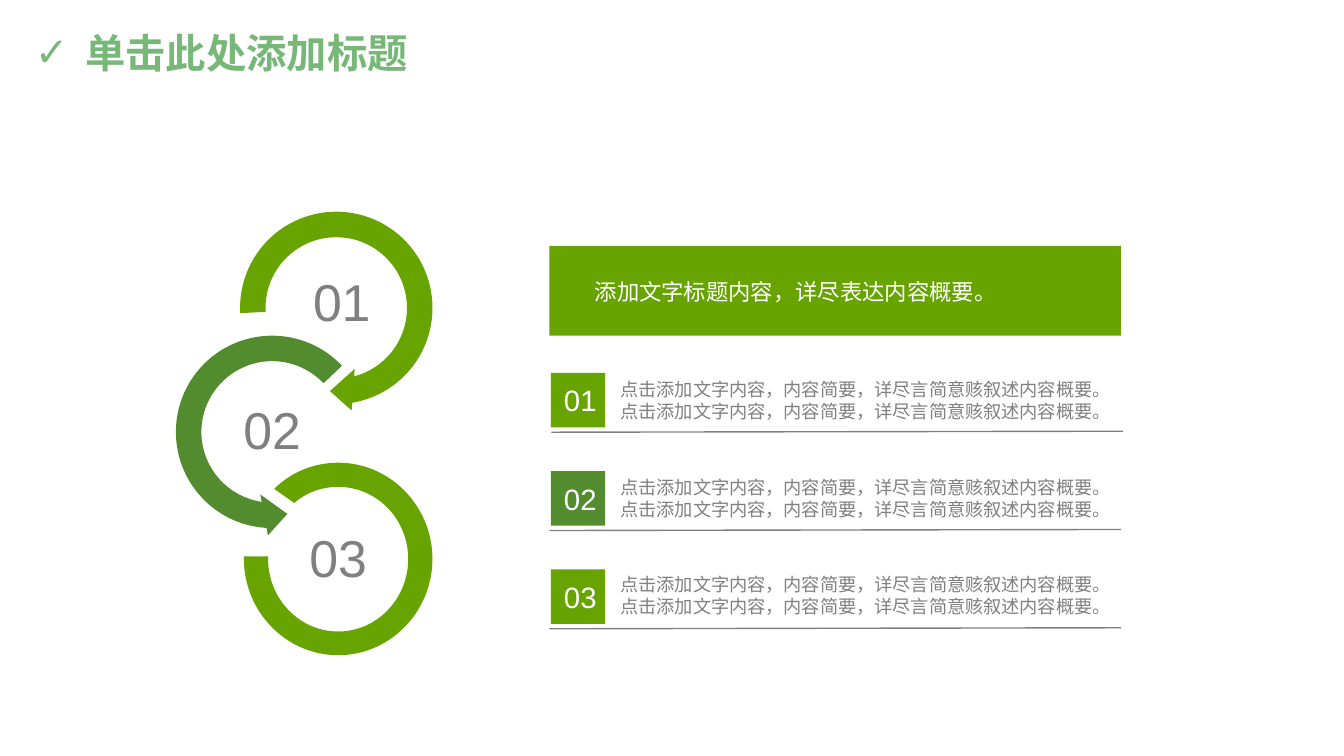
from dataclasses import dataclass
from typing import NamedTuple

from lxml.etree import SubElement
from pptx import Presentation
from pptx.dml.color import RGBColor as Color
from pptx.enum.shapes import MSO_CONNECTOR as Wire, MSO_SHAPE as Kind
from pptx.enum.text import MSO_ANCHOR as Anchor, MSO_AUTO_SIZE as Fit, PP_ALIGN as Align
from pptx.oxml.ns import qn
from pptx.util import Inches, Pt

CELL = Inches(0.1)  # one grid column or row
COLS, ROWS = 133.33, 75


@dataclass(frozen=True)
class Theme:
    lime: str = "67A400"
    leaf: str = "538C2E"
    mint: str = "77B878"
    gray: str = "808080"
    white: str = "FFFFFF"
    latin: str = "Arial"
    han: str = "Noto Sans CJK SC"
    head: str = "Montserrat"
    title: float = 28.8
    big: float = 37
    mark: float = 21
    lead: float = 16
    body: float = 13
    rule: float = 1


class Box(NamedTuple):
    left: float
    top: float
    width: float
    height: float


class Arrow(NamedTuple):
    box: Box
    turn: float
    start: float
    color: str
    flip: bool


class Step(NamedTuple):
    mark: str
    color: str
    label: Box  # place of the large number in its ring


T = Theme()
NOTE = "点击添加文字内容，内容简要，详尽言简意赅叙述内容概要。"
ARROWS = [
    Arrow(Box(23, 20.2, 20.7, 20.7), 97, 47.907, T.lime, False),
    Arrow(Box(16.65, 32.5, 20.7, 20.7), 256.8, 72.143, T.leaf, True),
]
STEPS = [
    Step("01", T.lime, Box(29.75, 26.1, 8.5, 7.6)),
    Step("02", T.leaf, Box(22.85, 38.8, 8.5, 7.6)),
    Step("03", T.lime, Box(29.4, 51.5, 8.5, 7.6)),
]
# Open ring: each entry ends a side; a curve lists two handles before its end
RING = [
    [(33.55, 45.9)],
    [(38.7, 45.9), (42.9, 50.2), (42.9, 55.45)],
    [(42.9, 60.7), (38.7, 65), (33.55, 65)],
    [(28.4, 65), (24.2, 60.7), (24.2, 55.45)],
    [(24.2, 55.2)],
    [(26.6, 55.2)],
    [(26.6, 55.45)],
    [(26.6, 59.4), (29.7, 62.65), (33.55, 62.65)],
    [(37.4, 62.65), (40.5, 59.4), (40.5, 55.45)],
    [(40.5, 51.5), (37.4, 48.3), (33.55, 48.3)],
    [(31.9, 48.3), (30.3, 48.9), (29.2, 49.9)],
    [(27.2, 48.5)],
    [(28.8, 46.9), (31.1, 45.9), (33.55, 45.9)],
]
LEFT, WIDTH = 54.5, 56.7  # banner and rules
FIRST, PITCH = 37, 9.75  # top of the first row, row to row
TEXT, STRIDE = 36.85, 9.67  # top of the first note, note to note


def grid(*cells: float) -> list[int]:
    """Turn columns or rows into slide units."""
    return [round(cell * CELL) for cell in cells]


def write(frame, *lines: str, size: float, color: str, font: str, bold: bool = False) -> None:
    """Fill a text frame, one paragraph a line."""
    for i, line in enumerate(lines):
        para = frame.add_paragraph() if i else frame.paragraphs[0]
        para.alignment = Align.LEFT
        run = para.add_run()
        run.text = line
        run.font.size = Pt(size)
        run.font.bold = bold
        run.font.name = font
        run.font.color.rgb = Color.from_string(color)
        east = T.latin if font == T.latin else T.han
        SubElement(run.font._element, qn("a:ea"), typeface=east)


def label(slide, box: Box, *lines: str, size: float, color: str, font: str) -> None:
    frame = slide.shapes.add_textbox(*grid(*box)).text_frame
    frame.word_wrap = False
    frame.auto_size = Fit.SHAPE_TO_FIT_TEXT
    frame.margin_left = frame.margin_right = Inches(0.13)
    frame.margin_top = frame.margin_bottom = Inches(0.07)
    write(frame, *lines, size=size, color=color, font=font)


def paint(shape, color: str) -> None:
    shape.shadow.inherit = False
    shape.fill.solid()
    shape.fill.fore_color.rgb = Color.from_string(color)
    shape.line.fill.background()


def block(slide, kind: Kind, box: Box, color: str):
    shape = slide.shapes.add_shape(kind, *grid(*box))
    paint(shape, color)
    return shape


def bend(slide, arrow: Arrow) -> None:
    """Draw a circular arrow."""
    shape = block(slide, Kind.CIRCULAR_ARROW, arrow.box, arrow.color)
    for i, value in enumerate((0.122, 9.624, 204.769, arrow.start, 0.1)):
        shape.adjustments[i] = value
    shape.rotation = arrow.turn
    if arrow.flip:
        shape._element.spPr.find(qn("a:xfrm")).set("flipH", "1")


def ring(slide, color: str) -> None:
    """Draw the open ring, then round its curved sides."""
    first, *ends = [grid(*side[-1]) for side in RING]
    path = slide.shapes.build_freeform(*first)
    path.add_line_segments(ends, close=True)
    shape = path.convert_to_shape()
    paint(shape, color)
    sides = list(shape._element.iter(qn("a:lnTo")))
    for line, side in zip(sides, RING[1:]):
        if len(side) == 3:
            line.clear()
            line.tag = qn("a:cubicBezTo")
            for point in side:
                x, y = grid(*point)
                SubElement(line, qn("a:pt"), x=str(x - shape.left), y=str(y - shape.top))


def rule(slide, left: float, top: float) -> None:
    """Draw a rule that rises a little to the right."""
    line = slide.shapes.add_connector(
        Wire.STRAIGHT, *grid(left, top, left + WIDTH, top - 0.1))
    line.line.color.rgb = Color.from_string(T.gray)
    line.line.width = Pt(T.rule)
    SubElement(line._element.spPr, qn("a:effectLst"))


def head(slide, text: str) -> None:
    """Place the title and give it a tick bullet."""
    title = slide.shapes.title
    title.left, title.top, title.width, title.height = grid(2.45, 2.9, 115, 5.1)
    frame = title.text_frame
    frame.vertical_anchor = Anchor.MIDDLE
    para = frame.paragraphs[0]
    para.line_spacing = 0.9
    props = para._p.get_or_add_pPr()
    props.set("marL", str(Inches(0.5)))
    props.set("indent", str(-Inches(0.5)))
    SubElement(props, qn("a:buFont"), typeface=T.latin)
    SubElement(props, qn("a:buChar"), char="✓")
    write(frame, text, size=T.title, color=T.mint, font=T.head, bold=True)


def row(slide, step: Step, i: int) -> None:
    """Draw one numbered note with the rule below it."""
    top = FIRST + i * PITCH
    block(slide, Kind.RECTANGLE, Box(54.65, top, 5.4, 5.4), step.color)
    label(slide, Box(54.65, top + 0.25, 6, 4.9), step.mark,
          size=T.mark, color=T.white, font=T.latin)
    label(slide, Box(60.25, TEXT + i * STRIDE, 53.2, 5.8), NOTE, NOTE,
          size=T.body, color=T.gray, font=T.han)
    rule(slide, LEFT if i else LEFT + 0.2, top + 5.88)


def main() -> None:
    deck = Presentation()
    deck.slide_width, deck.slide_height = grid(COLS, ROWS)
    slide = deck.slides.add_slide(deck.slide_layouts[5])
    for arrow in ARROWS:
        bend(slide, arrow)
    ring(slide, T.lime)
    block(slide, Kind.RECTANGLE, Box(LEFT, 24.4, WIDTH, 8.9), T.lime)
    label(slide, Box(57.7, 26.85, 43.1, 4), "添加文字标题内容，详尽表达内容概要。",
          size=T.lead, color=T.white, font=T.han)
    for i, step in enumerate(STEPS):
        label(slide, step.label, step.mark, size=T.big, color=T.gray, font=T.latin)
        row(slide, step, i)
    head(slide, "单击此处添加标题")
    deck.save("out.pptx")


if __name__ == "__main__":
    main()
